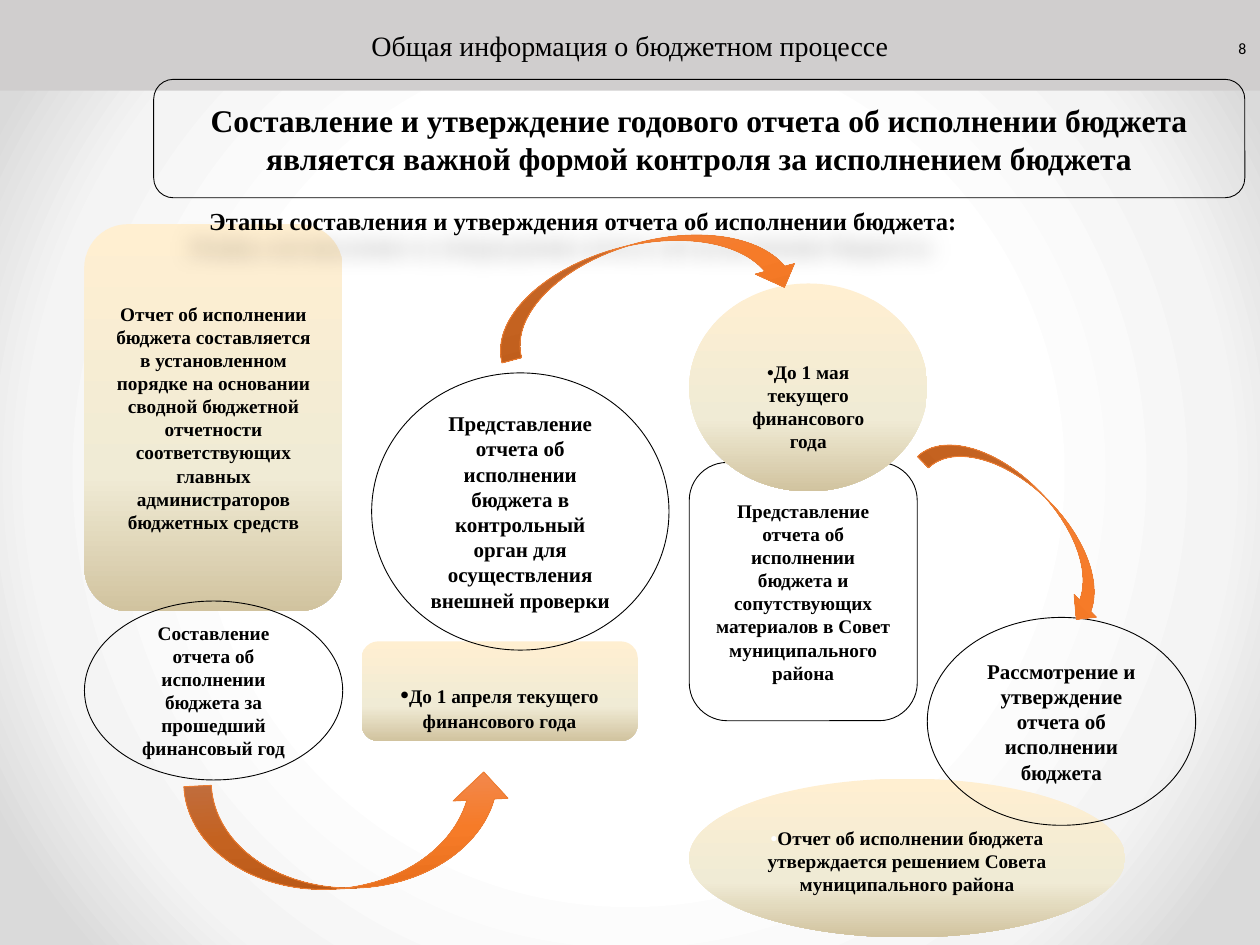
from pptx import Presentation
from pptx.dml.color import RGBColor as RGB
from pptx.enum.shapes import MSO_SHAPE as Form
from pptx.enum.text import MSO_ANCHOR as Anchor, MSO_AUTO_SIZE as Auto, PP_ALIGN as Align
from pptx.oxml.ns import qn
from pptx.util import Inches, Pt
from lxml.etree import SubElement as Sub

HUES = {"ink": "000000", "white": "FFFFFF", "band": "D0CECE", "edge": "ED7D31"}
FADES = {
    "back": ((50, "FFFFFF"), (76, "F4F4F4"), (92, "DADADA")),
    "sand": ((0, "FFEFD1"), (65, "F0EBD5"), (100, "D1C39F")),
    "flame": ((0, "F18C57"), (50, "F67B28"), (100, "E56C19")),
}
COLS, ROWS = 100, 75
SERIF = "Times New Roman"


def hue(name):
    return RGB.from_string(HUES[name])


def write(shape, *parts, size=11, font=SERIF, color="ink", bold=True,
          align=Align.CENTER, top=0.05, bottom=0.05):
    frame = shape.text_frame
    frame.word_wrap = True
    frame.auto_size = Auto.NONE
    frame.vertical_anchor = Anchor.MIDDLE
    frame.margin_left = frame.margin_right = Inches(0.1)
    frame.margin_top, frame.margin_bottom = Inches(top), Inches(bottom)
    para = frame.paragraphs[0]
    para.alignment = align
    for part in parts:
        text, extra = part if isinstance(part, tuple) else (part, {})
        run = para.add_run()
        run.text = text
        run.font.name = font
        run.font.size = Pt(extra.get("size", size))
        run.font.bold = bold
        run.font.color.rgb = hue(extra.get("color", color))


def blend(fill, root, name, radial=False):
    fill.gradient()
    grad = root.find(".//" + qn("a:gradFill"))
    for child in list(grad):
        grad.remove(child)
    stops = Sub(grad, qn("a:gsLst"))
    for place, code in FADES[name]:
        stop = Sub(stops, qn("a:gs"), pos=str(place * 1000))
        Sub(stop, qn("a:srgbClr"), val=code)
    if radial:
        ring = Sub(grad, qn("a:path"), path="circle")
        Sub(ring, qn("a:fillToRect"), dict.fromkeys("ltrb", "50000"))
    else:
        Sub(grad, qn("a:lin"), ang="5400000", scaled="0")


class Deck:
    def __init__(self):
        self.show = Presentation()
        self.show.slide_width, self.show.slide_height = Inches(10), Inches(7.5)
        self.slide = self.show.slides.add_slide(self.show.slide_layouts[5])
        blend(self.slide.background.fill, self.slide.element, "back", radial=True)

    def area(self, col, row, wide, high):
        unit_x, unit_y = self.show.slide_width / COLS, self.show.slide_height / ROWS
        return [round(n) for n in (col * unit_x, row * unit_y, wide * unit_x, high * unit_y)]

    def title(self, spot, text):
        head = self.slide.shapes.title
        head.left, head.top, head.width, head.height = self.area(*spot)
        geom = Sub(head.element.spPr, qn("a:prstGeom"), prst="roundRect")
        Sub(geom, qn("a:avLst"))
        head.fill.solid()
        head.fill.fore_color.rgb = hue("band")
        write(head, text, size=16, bold=False)

    def shape(self, form, spot, fade=None, line=None):
        item = self.slide.shapes.add_shape(form, *self.area(*spot))
        item.shadow.inherit = False
        if fade:
            blend(item.fill, item.element.spPr, fade)
        else:
            item.fill.background()
        if line:
            item.line.color.rgb = hue(line)
            item.line.width = Pt(0.5)
        else:
            item.line.fill.background()
        return item

    def plate(self, form, spot, *parts, **style):
        item = self.shape(form, spot, fade="sand")
        write(item, *parts, **style)

    def frame(self, form, spot, text, **style):
        item = self.shape(form, spot, line="ink")
        write(item, text, **style)

    def label(self, spot, text, **style):
        item = self.shape(Form.ROUNDED_RECTANGLE, spot)
        write(item, text, **style)
        glow = Sub(item.element.spPr.find(qn("a:effectLst")), qn("a:outerShdw"),
                   blurRad="152400", dist="245000", dir="8100000",
                   algn="ctr", rotWithShape="0")
        tint = Sub(glow, qn("a:srgbClr"), val=HUES["ink"])
        Sub(tint, qn("a:alpha"), val="30000")

    def arrow(self, form, spot, turn):
        self.shape(form, spot, fade="flame", line="edge").rotation = turn

    def number(self, spot, text):
        box = self.slide.shapes.add_textbox(*self.area(*spot))
        write(box, text, size=9, font="Calibri", bold=False, align=Align.RIGHT)


def main():
    deck = Deck()
    card, oval = Form.ROUNDED_RECTANGLE, Form.OVAL
    down, up = Form.CURVED_DOWN_ARROW, Form.CURVED_UP_ARROW

    deck.title((0, 0, 100, 7.2), "Общая информация о бюджетном процессе")
    deck.plate(card, (6.7, 17.8, 20.5, 30.7),
               "Отчет об исполнении бюджета составляется в установленном порядке "
               "на основании сводной бюджетной отчетности соответствующих главных "
               "администраторов бюджетных средств")
    deck.frame(card, (54.7, 36.7, 18.1, 20.5),
               "Представление отчета об исполнении бюджета и сопутствующих "
               "материалов в Совет муниципального района")
    deck.plate(card, (28.7, 50.9, 21.9, 7.9), ("•", {"size": 14}),
               "До 1 апреля текущего финансового года", top=0.28)
    deck.frame(oval, (6.7, 47.7, 20.5, 14.2),
               "Составление отчета об исполнении бюджета за прошедший финансовый год")
    deck.plate(oval, (54.7, 22.5, 18.9, 16.5),
               "•До 1 мая текущего финансового года", top=0.35)
    deck.frame(oval, (29.5, 29.6, 23.6, 22),
               "Представление отчета об исполнении бюджета в контрольный орган "
               "для осуществления внешней проверки", size=12)
    deck.label((2.8, 15.6, 87, 3.9),
               "Этапы составления и утверждения отчета об исполнении бюджета:", size=14)
    deck.frame(card, (12.2, 6.3, 86.6, 9.4),
               "Составление и утверждение годового отчета об исполнении бюджета "
               "является важной формой контроля за исполнением бюджета", size=18)
    deck.arrow(up, (14.8, 61.8, 26, 8.7), 357.2)
    deck.arrow(down, (38.6, 19.3, 24.8, 6.4), 345)
    deck.plate(oval, (54.7, 61.8, 34.6, 12.6), ("•", {"color": "white"}),
               "Отчет об исполнении бюджета утверждается решением Совета "
               "муниципального района", top=0.48, bottom=0.43)
    deck.frame(oval, (73.6, 49, 21.3, 16.5),
               "Рассмотрение и утверждение отчета об исполнении бюджета", size=12)
    deck.arrow(down, (71.7, 38.9, 19.3, 5), 45.7)
    deck.number((76.6, 1.8, 23.3, 4), "8")
    deck.show.save("out.pptx")


if __name__ == "__main__":
    main()
